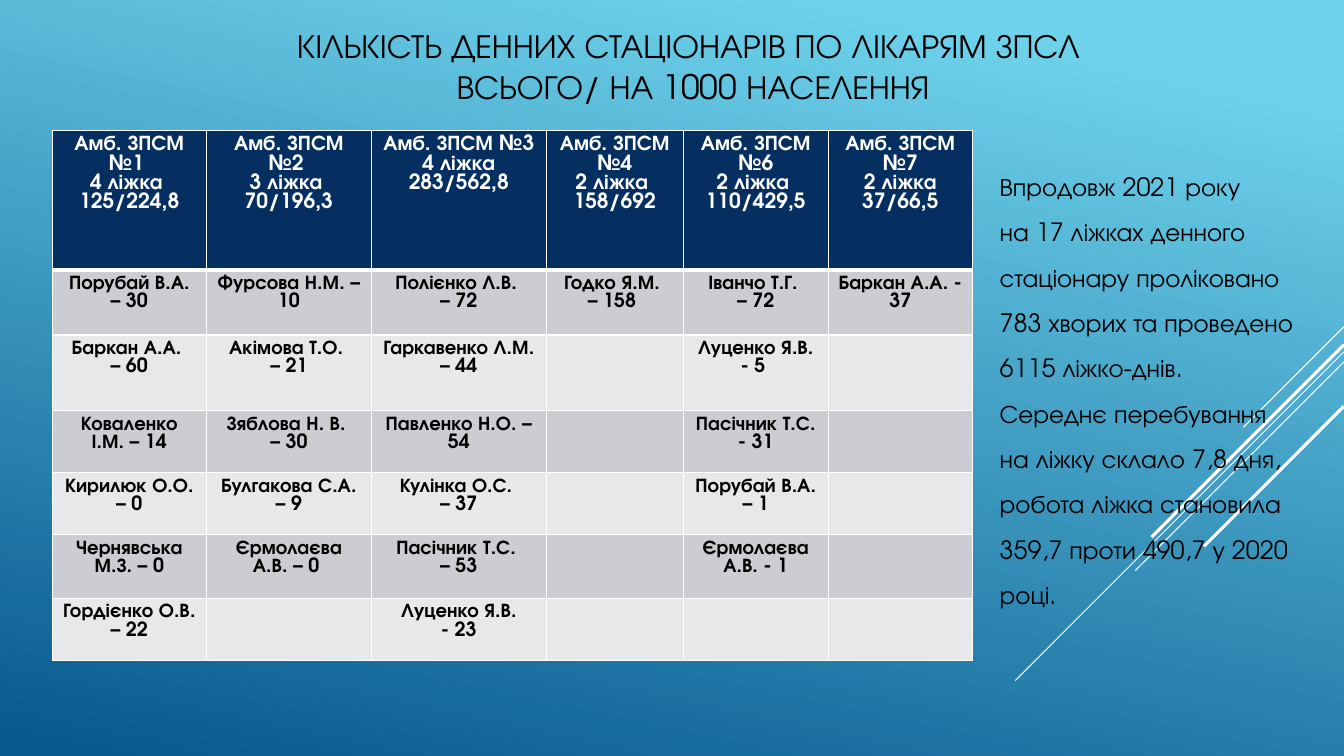
from lxml import etree
from pptx import Presentation
from pptx.dml.color import RGBColor
from pptx.enum import shapes, text
from pptx.oxml import ns
from pptx.util import Pt

FONT = "TeX Gyre Adventor"
COLORS = {
    "sky": "6ED2EB", "sea": "06588E", "header": "052F61",
    "odd": "CCCDD2", "even": "E7E8EA", "white": "FFFFFF", "black": "000000",
}


def rgb(name):
    return RGBColor.from_string(COLORS[name])


def style(tf, size, color="black", bold=False, **paragraph_format):
    for p in tf.paragraphs:
        for name, value in paragraph_format.items():
            setattr(p, name, value)
        for r in p.runs:
            for name, value in {"name": FONT, "size": Pt(size), "bold": bold}.items():
                setattr(r.font, name, value)
            r.font.color.rgb = rgb(color)


prs = Presentation()
prs.slide_width, prs.slide_height = Pt(960), Pt(540)
s = prs.slides.add_slide(prs.slide_layouts[5])

bg = s.background.fill
bg.gradient()
bg.gradient_angle = 258
for stop, position, color in zip(bg.gradient_stops, (0.1, 1), ("sky", "sea")):
    stop.position = position
    stop.color.rgb = rgb(color)

for top, run, width in [(233.3, 72, 0.75), (251.3, 234.7, 0.75), (258.5, 149, 0.75),
                        (246.2, 137.5, 2.25), (290.2, 100, 2.25)]:
    ray = s.shapes.add_connector(shapes.MSO_CONNECTOR.STRAIGHT,
                                 Pt(960), Pt(top), Pt(960 - run), Pt(top + run))
    ray.line.color.rgb = rgb("white")
    ray.line.width = Pt(width)
    etree.SubElement(ray._element.spPr, ns.qn("a:effectLst"))

title = s.shapes.title
for name, value in {"left": 159, "top": 0, "width": 672, "height": 93.6}.items():
    setattr(title, name, Pt(value))
tf = title.text_frame
tf.text = "КІЛЬКІСТЬ ДЕННИХ СТАЦІОНАРІВ ПО ЛІКАРЯМ ЗПСЛ \vВСЬОГО/ НА 1000 НАСЕЛЕННЯ"
tf.word_wrap = True
tf.auto_size = text.MSO_AUTO_SIZE.NONE
tf.vertical_anchor = text.MSO_ANCHOR.MIDDLE
style(tf, 24, alignment=text.PP_ALIGN.CENTER)

rows = [
    ["Амб. ЗПСМ №1 \n4 ліжка \v125/224,8", "Амб. ЗПСМ №2 \n3 ліжка \v70/196,3",
     "Амб. ЗПСМ №3 \n4 ліжка\v283/562,8", "Амб. ЗПСМ №4\n2 ліжка \n158/692",
     "Амб. ЗПСМ №6\n2 ліжка \n110/429,5", "Амб. ЗПСМ №7\n2 ліжка\n37/66,5"],
    ["Порубай В.А. – 30", "Фурсова Н.М. – 10", "Полієнко Л.В. \n– 72",
     "Годко Я.М. \n– 158 ", "Іванчо Т.Г. \n– 72", "Баркан А.А. - 37"],
    ["Баркан А.А. \n– 60", "Акімова Т.О. \n– 21", "Гаркавенко Л.М. – 44",
     "", "Луценко Я.В. - 5 ", ""],
    ["Коваленко І.М. – 14", "Зяблова Н. В. \n– 30", "Павленко Н.О. – 54",
     "", "Пасічник Т.С. - 31", ""],
    ["Кирилюк О.О. – 0", "Булгакова С.А. – 9", "Кулінка О.С. \n– 37",
     "", "Порубай В.А. – 1", ""],
    ["Чернявська М.З. – 0", "Єрмолаєва А.В. – 0 ", "Пасічник Т.С. \n– 53",
     "", "Єрмолаєва А.В. - 1", ""],
    ["Гордієнко О.В. – 22", "", "Луценко Я.В.\n- 23", "", "", ""],
]
col_widths = [110, 118, 124.8, 98, 103.4, 103.2]
row_heights = [99.6, 46.5, 54, 44.4, 44.4, 45.4, 44.4]
table = s.shapes.add_table(len(rows), len(col_widths), Pt(37.4), Pt(93.2),
                           Pt(sum(col_widths)), Pt(sum(row_heights))).table
for col, width in zip(table.columns, col_widths):
    col.width = Pt(width)
for i, (row, height) in enumerate(zip(rows, row_heights)):
    table.rows[i].height = Pt(height)
    fill = "header" if i == 0 else "odd" if i % 2 else "even"
    for j, content in enumerate(row):
        cell = table.cell(i, j)
        cell.text = content
        style(cell.text_frame, 14 if i else 15, "black" if i else "white", True,
              alignment=text.PP_ALIGN.CENTER)
        tcPr = cell._tc.get_or_add_tcPr()
        for side in "LRTB":
            thick = (i, side) in [(0, "B"), (1, "T")]
            ln = etree.SubElement(tcPr, ns.qn("a:ln" + side), w=str(Pt(3 if thick else 1)))
            solid = etree.SubElement(ln, ns.qn("a:solidFill"))
            etree.SubElement(solid, ns.qn("a:srgbClr"), val=COLORS["white"])
        cell.fill.solid()
        cell.fill.fore_color.rgb = rgb(fill)

summary = s.shapes.add_textbox(Pt(707), Pt(108), Pt(226), Pt(363))
tf = summary.text_frame
tf.word_wrap = True
tf.auto_size = text.MSO_AUTO_SIZE.SHAPE_TO_FIT_TEXT
tf.text = ("Впродовж 2021 року\n"
           "на 17 ліжках денного стаціонару проліковано 783 хворих та проведено "
           "6115 ліжко-днів. Середнє перебування на ліжку склало 7,8 дня, робота "
           "ліжка становила 359,7 проти 490,7 у 2020 році.")
style(tf, 18, line_spacing=1.5)

prs.save("out.pptx")
